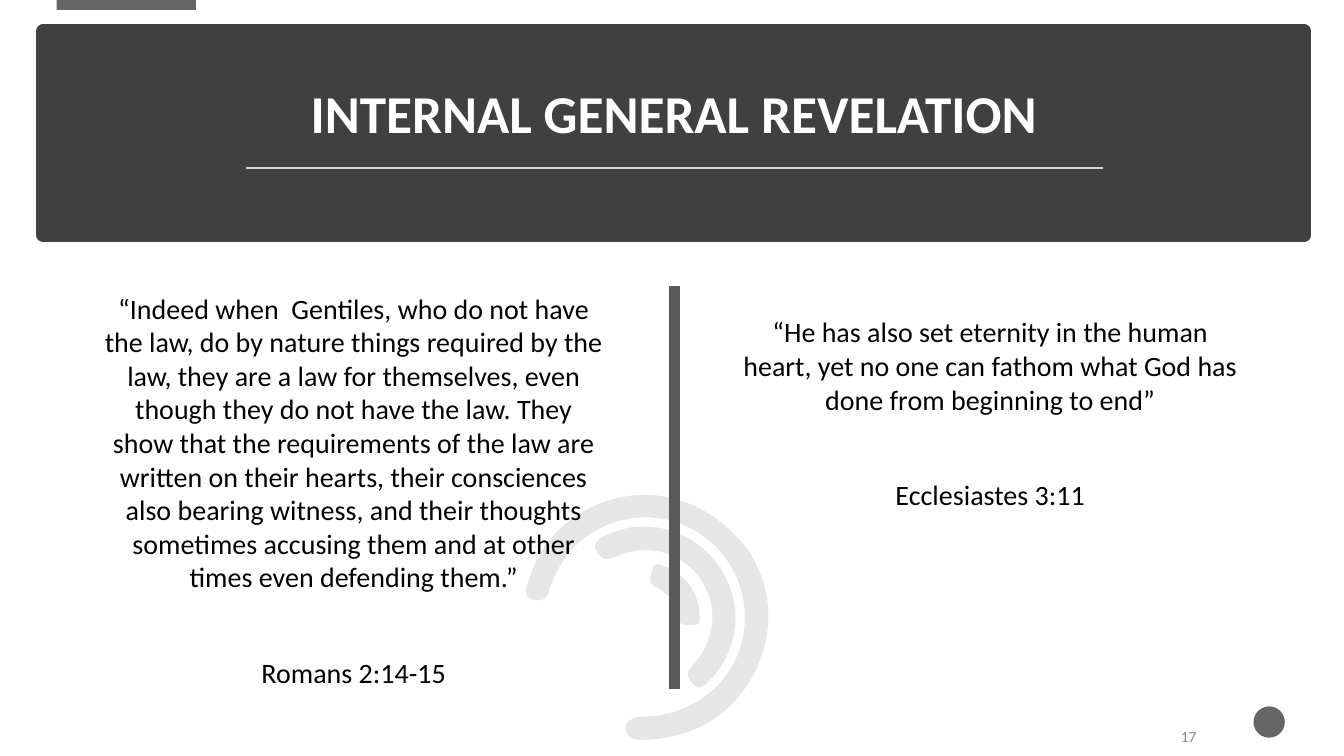
from lxml import etree
from pptx import Presentation
from pptx.dml.color import RGBColor
from pptx.enum.shapes import MSO_CONNECTOR, MSO_SHAPE
from pptx.enum.text import MSO_ANCHOR as ANCHOR, PP_ALIGN as ALIGN
from pptx.oxml.ns import qn
from pptx.util import Cm, Pt

# Content; boxes are left, top, width, height in cm
FONT = "Calibri"
TITLE = ("INTERNAL GENERAL REVELATION", (1.52, 1.19, 30.94, 2.59))
PAGE_NUMBER = ("17", (23.9, 18.11, 7.62, 0.97))
VERSES = [
    ("“He has also set eternity in the human heart, yet no one can fathom "
     "what God has done from beginning to end”",
     "Ecclesiastes 3:11", (18.39, 7.81, 13.13, 5.23)),
    ("“Indeed when  Gentiles, who do not have the law, do by nature things "
     "required by the law, they are a law for themselves, even though they do "
     "not have the law. They show that the requirements of the law are written "
     "on their hearts, their consciences also bearing witness, and their "
     "thoughts sometimes accusing them and at other times even defending them.”",
     "Romans 2:14-15", (2.35, 7.21, 13.13, 10.36)),
]
TOP_TAB = (MSO_SHAPE.RECTANGLE, (1.43, -0.05, 3.51, 0.3), "666666")
CORNER_DOT = (MSO_SHAPE.OVAL, (31.59, 17.8, 0.79, 0.79), "666666")
BANNER = (MSO_SHAPE.RECTANGLE, (1.09, 0.79, 31.78, 5.13), "404040")
BANNER_BORDER = 10
RULES = [  # x1, y1, x2, y2, colour, points
    (6.2, 4.23, 27.79, 4.23, "D9D9D9", 1.75),
    (16.99, 7.21, 16.99, 17.37, "595959", 8),
]
# Outlines in hundredths of an inch: a start, then Bezier triples
ARC_UNIT = Cm(2.54) / 100
ARC_COLOR = "E7E6E6"
ARCS = [
    [(743, 547),
     (765, 581), (770, 623), (749, 667), (726, 710), (689, 732), (640, 734),
     (634, 734), (627, 735), (623, 729), (617, 720), (624, 711), (637, 711),
     (693, 711), (737, 670), (739, 616), (741, 567), (706, 524), (659, 515),
     (610, 506), (563, 533), (547, 580), (546, 581), (545, 583), (545, 585),
     (543, 594), (538, 597), (529, 595), (519, 592), (521, 584), (524, 578),
     (535, 540), (560, 513), (597, 499), (649, 479), (706, 497), (743, 547)],
    [(712, 560),
     (738, 596), (735, 642), (705, 674), (700, 679), (695, 686), (688, 679),
     (681, 672), (680, 667), (688, 659), (711, 634), (713, 599), (694, 573),
     (675, 547), (641, 538), (609, 553), (600, 557), (596, 554), (592, 547),
     (587, 538), (594, 535), (600, 532), (637, 512), (686, 524), (712, 560)],
    [(684, 580),
     (690, 589), (694, 599), (694, 610), (694, 614), (696, 620), (689, 620),
     (682, 620), (673, 622), (672, 612), (670, 598), (663, 588), (650, 582),
     (641, 578), (646, 570), (648, 564), (650, 557), (655, 560), (659, 562),
     (670, 565), (677, 572), (684, 580)],
]

prs = Presentation()
prs.slide_width, prs.slide_height = Cm(33.87), Cm(19.05)
slide = prs.slides.add_slide(prs.slide_layouts[6])
shapes = slide.shapes


def color(hex_code):
    return RGBColor.from_string(hex_code)


def paint(shape, hex_code):
    shape.shadow.inherit = False
    shape.fill.solid()
    shape.fill.fore_color.rgb = color(hex_code)
    shape.line.fill.background()


def add_block(preset, box, hex_code):
    block = shapes.add_shape(preset, *map(Cm, box))
    paint(block, hex_code)
    return block


def add_arc(points):
    builder = shapes.build_freeform(*points[0], scale=ARC_UNIT)
    builder.add_line_segments(points[1:], close=True)
    arc = builder.convert_to_shape()
    # Join every three segments into one cubic curve
    segments = list(arc._element.iter(qn("a:lnTo")))
    for first in range(0, len(segments), 3):
        curve = etree.Element(qn("a:cubicBezTo"))
        segments[first].addprevious(curve)
        for segment in segments[first:first + 3]:
            curve.append(segment[0])
            segment.getparent().remove(segment)
    paint(arc, ARC_COLOR)


def write(shape, lines, size, hex_code, align, anchor=ANCHOR.TOP, bold=False):
    frame = shape.text_frame
    frame.word_wrap = True
    frame.vertical_anchor = anchor
    frame.text = "\n".join(lines)
    for paragraph in frame.paragraphs:
        paragraph.alignment = align
        font = paragraph.runs[0].font
        font.name, font.size, font.bold = FONT, Pt(size), bold
        font.color.rgb = color(hex_code)
    return frame.paragraphs


# Background decoration
add_block(*TOP_TAB)
for points in ARCS:
    add_arc(points)
add_block(*CORNER_DOT)

# Banner, title and rules
banner = add_block(*BANNER)
banner.line.color.rgb = color(BANNER[2])
banner.line.width = Pt(BANNER_BORDER)
title_text, title_box = TITLE
title = shapes.add_textbox(*map(Cm, title_box))
write(title, [title_text], 38, "FFFFFF", ALIGN.CENTER, ANCHOR.BOTTOM,
      bold=True)[0].line_spacing = 0.9
for *ends, hex_code, width in RULES:
    rule = shapes.add_connector(MSO_CONNECTOR.STRAIGHT, *map(Cm, ends))
    rule.line.color.rgb = color(hex_code)
    rule.line.width = Pt(width)
    etree.SubElement(rule._element.spPr, qn("a:effectLst"))

# Page number, in an unpainted oval
number, number_box = PAGE_NUMBER
page = add_block(MSO_SHAPE.OVAL, number_box, "FFFFFF")
page.fill.background()
write(page, [number], 11, "898989", ALIGN.RIGHT, ANCHOR.MIDDLE)[0].line_spacing = 0.9

# Verses with their references
for verse, citation, box in VERSES:
    passage = shapes.add_textbox(*map(Cm, box))
    quote, reference = write(passage, [verse, citation], 20, "000000", ALIGN.CENTER)
    quote.space_after = Pt(10)
    reference.space_before = Pt(34)

prs.save("out.pptx")
